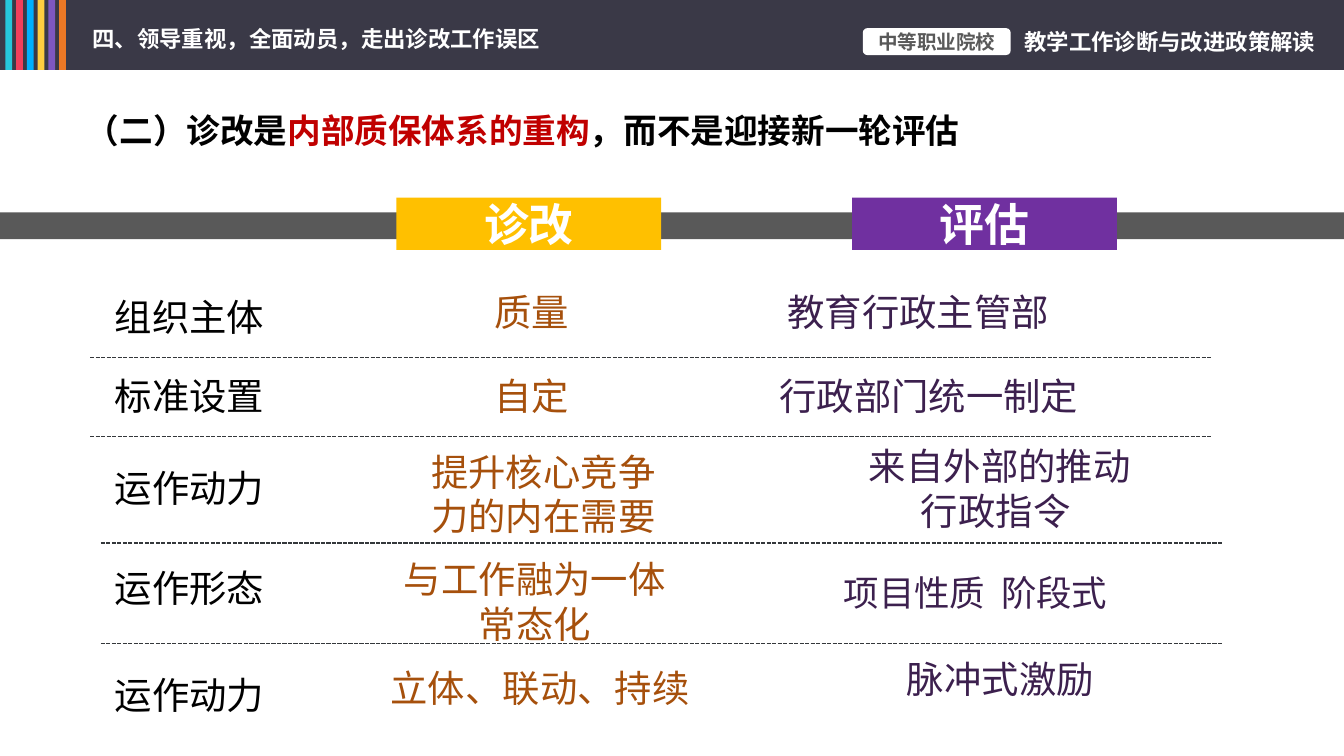
"""Build a slide comparing diagnosis-led improvement with evaluation."""
from lxml.etree import SubElement
from pptx import Presentation
from pptx.dml.color import RGBColor
from pptx.enum.dml import MSO_LINE
from pptx.enum.shapes import MSO_CONNECTOR, MSO_SHAPE
from pptx.enum.text import MSO_ANCHOR, PP_ALIGN
from pptx.oxml.ns import qn
from pptx.util import Inches, Pt

FONT = "Noto Sans CJK SC"
WHITE = RGBColor(0xFF, 0xFF, 0xFF)
BLACK = RGBColor(0x00, 0x00, 0x00)
NAVY = RGBColor(0x3A, 0x39, 0x47)
GRAY = RGBColor(0x59, 0x59, 0x59)
RULE = RGBColor(0x34, 0x38, 0x3B)
RED = RGBColor(0xC0, 0x00, 0x00)
GOLD = RGBColor(0xFF, 0xC0, 0x00)
PURPLE = RGBColor(0x70, 0x30, 0xA0)
BROWN = RGBColor(0xA6, 0x50, 0x0C)
PLUM = RGBColor(0x3C, 0x20, 0x4E)
STRIPES = [
    RGBColor(0x26, 0xC6, 0xDA),
    RGBColor(0xF2, 0x3E, 0x5C),
    RGBColor(0x00, 0xB0, 0xFF),
    RGBColor(0xFF, 0xCD, 0x40),
    RGBColor(0x7E, 0x57, 0xC1),
    RGBColor(0xEC, 0x78, 0x25),
]

deck = Presentation()
deck.slide_width = Inches(10)
deck.slide_height = Inches(10) * 9 // 16
slide = deck.slides.add_slide(deck.slide_layouts[6])


def add_block(left, top, width, height, fill, kind=MSO_SHAPE.RECTANGLE):
    block = slide.shapes.add_shape(
        kind, Inches(left), Inches(top), Inches(width), Inches(height))
    block.shadow.inherit = False
    block.fill.solid()
    block.fill.fore_color.rgb = fill
    block.line.fill.background()
    return block


def add_text(text, box=None, at=None, size=20, color=BLACK, bold=False,
             align=PP_ALIGN.CENTER, anchor=MSO_ANCHOR.TOP, wrap=True,
             inset=0.1, indent=0, tab=0):
    """Write text, or (text, color) runs, into a shape or a new box."""
    if box is None:
        box = slide.shapes.add_textbox(*[Inches(n) for n in at])
    frame = box.text_frame
    frame.word_wrap = wrap
    frame.vertical_anchor = anchor
    frame.margin_left = frame.margin_right = Inches(inset)
    frame.margin_top = frame.margin_bottom = Inches(inset / 2)
    runs = [(text, color)] if isinstance(text, str) else text
    para = frame.paragraphs[0]
    for words, tint in runs:
        for i, line in enumerate(words.split("\n")):
            if i:
                para = frame.add_paragraph()
            para.alignment = align
            run = para.add_run()
            run.text = line
            run.font.size = Pt(size)
            run.font.bold = bold
            run.font.color.rgb = tint
            run.font.name = FONT
            SubElement(run._r.get_or_add_rPr(), qn("a:ea"), typeface=FONT)
    props = para._p.get_or_add_pPr()
    if indent:
        props.set("indent", str(Inches(indent)))
    if tab:
        stops = SubElement(props, qn("a:tabLst"))
        SubElement(stops, qn("a:tab"), pos=str(Inches(tab)), algn="l")


add_block(0, 0, 10, 0.52, NAVY)
for i, tint in enumerate(STRIPES):
    add_block(0.04 + 0.08 * i, 0, 0.05, 0.52, tint)
add_text("四、领导重视，全面动员，走出诊改工作误区", at=(0.59, 0.14, 3.57, 0.3),
         size=12, color=WHITE, bold=True, align=PP_ALIGN.LEFT,
         anchor=MSO_ANCHOR.MIDDLE, wrap=False)
badge = add_block(6.42, 0.21, 1.1, 0.2, WHITE, MSO_SHAPE.ROUNDED_RECTANGLE)
add_text("中等职业院校", box=badge, size=10.5, color=GRAY, bold=True,
         anchor=MSO_ANCHOR.MIDDLE, inset=0)
add_text("教学工作诊断与改进政策解读", at=(7.61, 0.21, 2.19, 0.2), size=12,
         color=WHITE, bold=True, anchor=MSO_ANCHOR.MIDDLE, wrap=False, inset=0)

title = [("（二）诊改是", BLACK), ("内部质保体系的重构", RED),
         ("，而不是迎接新一轮评估", BLACK)]
add_text(title, at=(0.2, 0.77, 7.11, 0.4), size=18, bold=True,
         align=PP_ALIGN.LEFT, anchor=MSO_ANCHOR.MIDDLE, indent=0.34)

add_block(0, 1.58, 10, 0.2, GRAY)
for text, left, fill in [("诊改", 2.95, GOLD), ("评估", 6.34, PURPLE)]:
    head = add_block(left, 1.47, 1.97, 0.39, fill)
    add_text(text, box=head, size=24, color=WHITE, bold=True,
             anchor=MSO_ANCHOR.MIDDLE, inset=0)

for left, top in [(0.67, 2.66), (0.67, 3.25), (0.75, 4.04), (0.75, 4.79)]:
    rule = slide.shapes.add_connector(
        MSO_CONNECTOR.STRAIGHT, Inches(left), Inches(top),
        Inches(left + 8.35), Inches(top))
    rule.line.color.rgb = RULE
    rule.line.width = Pt(0.75)
    rule.line.dash_style = MSO_LINE.SQUARE_DOT
    SubElement(rule._element.spPr, qn("a:effectLst"))

labels = [("组织主体", 2.14), ("标准设置", 2.73), ("运作动力", 3.41),
          ("运作形态", 4.16), ("运作动力", 4.95)]
for text, top in labels:
    add_text(text, at=(0.75, top, 1.32, 0.44), wrap=False)

pairs = [("质量\t", "教育行政主管部", 2.1, 5, 2.18),
         ("自定\t", "行政部门统一制定", 2.73, 5.2, 2.12)]
for first, last, top, width, tab in pairs:
    add_text([(first, BROWN), (last, PLUM)], at=(3.58, top, width, 0.44),
             align=PP_ALIGN.LEFT, tab=tab)

add_text("提升核心竞争力的内在需要", at=(3.11, 3.29, 2.13, 0.77),
         color=BROWN, align=PP_ALIGN.LEFT)
add_text("来自外部的推动\n行政指令 ", at=(6.1, 3.25, 2.68, 0.77), color=PLUM)
add_text("与工作融为一体\n常态化", at=(2.8, 4.09, 2.36, 0.77), color=BROWN)
add_text("立体、联动、持续", at=(2.64, 4.9, 2.76, 0.44), color=BROWN)
add_text("脉冲式激励", at=(6.65, 4.83, 2.68, 0.44), color=PLUM,
         align=PP_ALIGN.LEFT)
add_text("项目性质\t阶段式", at=(6.18, 4.2, 2.68, 0.42), size=19, color=PLUM,
         align=PP_ALIGN.LEFT, tab=1.17)

deck.save("out.pptx")
